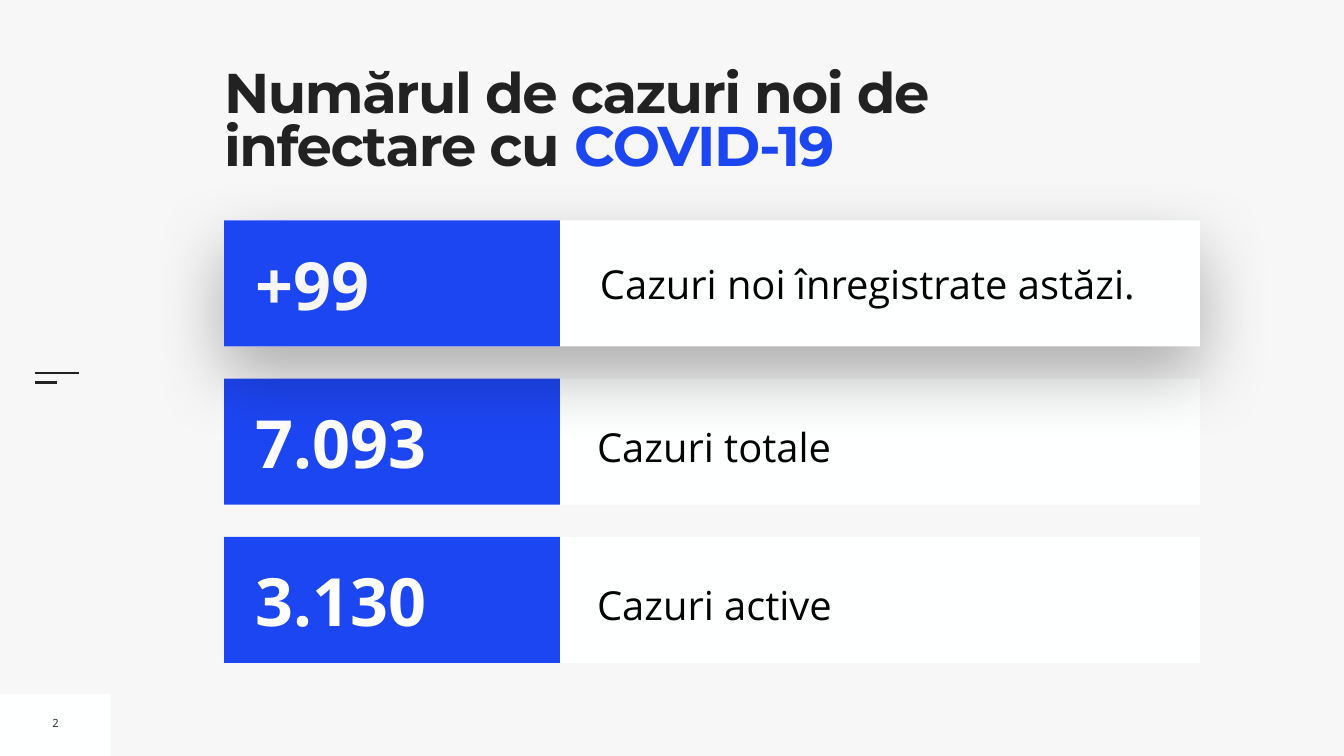
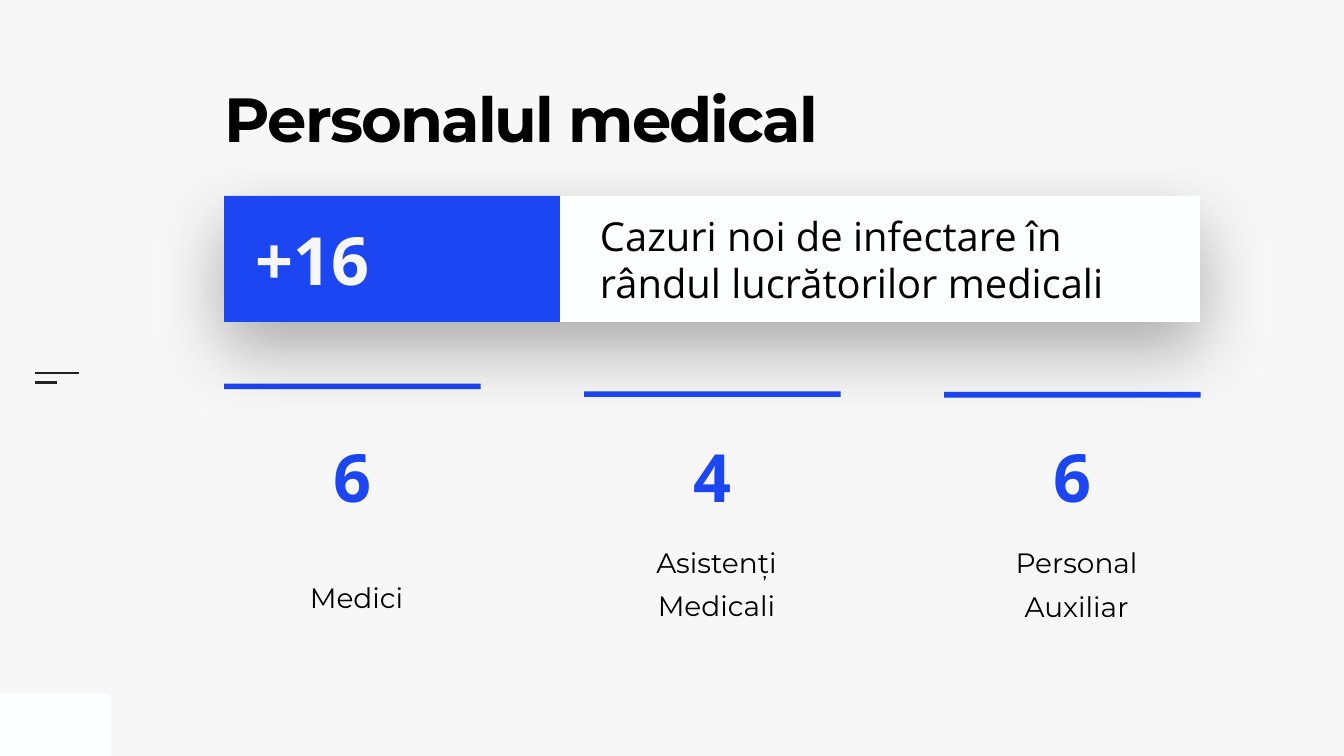
from lxml import etree
from pptx import Presentation
from pptx.dml.color import RGBColor
from pptx.enum.shapes import MSO_CONNECTOR, MSO_SHAPE
from pptx.enum.text import MSO_ANCHOR, MSO_AUTO_SIZE, PP_ALIGN
from pptx.oxml.ns import qn
from pptx.util import Pt

RECTANGLE = MSO_SHAPE.RECTANGLE
STRAIGHT = MSO_CONNECTOR.STRAIGHT
MIDDLE, TOP, BOTTOM = MSO_ANCHOR.MIDDLE, MSO_ANCHOR.TOP, MSO_ANCHOR.BOTTOM
LEFT, CENTER = PP_ALIGN.LEFT, PP_ALIGN.CENTER
NO_RESIZE, GROW = MSO_AUTO_SIZE.NONE, MSO_AUTO_SIZE.SHAPE_TO_FIT_TEXT

COLORS = {
    "background": "F7F7F7",
    "card": "FEFFFF",
    "blue": "1D46F3",
    "dark": "222222",
    "black": "000000",
    "white": "FFFFFF",
}
HEADING_FONT = "Montserrat"
BODY_FONT = "Open Sans"
TITLE_ONLY = 5

MARGIN_LEFT = 320
ROW_WIDTH, ROW_HEIGHT, BADGE_WIDTH = 1394, 180, 480
ROW_TOP, ROW_PITCH = 315, 226
FIGURE_HEIGHT = 130
COLUMN_WIDTH, COLUMN_HEIGHT, COLUMN_PITCH = 366.5, 393, 514.3


def rgb(name):
    return RGBColor.from_string(COLORS[name])


def write_text(shape, paragraphs, *, size, font=BODY_FONT, color="black",
               bold=False, align=LEFT, anchor=MIDDLE, insets=(7.2,) * 4,
               line_spacing=None, space_before=None, tracking=None,
               wrap=True, auto_size=NO_RESIZE):
    """Write paragraphs: each is a string or a list of (text, color) runs."""
    frame = shape.text_frame
    frame.word_wrap = wrap
    frame.auto_size = auto_size
    frame.vertical_anchor = anchor
    (frame.margin_left, frame.margin_top,
     frame.margin_right, frame.margin_bottom) = map(Pt, insets)
    if isinstance(paragraphs, str):
        paragraphs = [paragraphs]
    for index, content in enumerate(paragraphs):
        paragraph = frame.add_paragraph() if index else frame.paragraphs[0]
        paragraph.alignment = align
        if line_spacing:
            paragraph.line_spacing = line_spacing
        if space_before is not None:
            paragraph.space_before = Pt(space_before)
        runs = [(content, color)] if isinstance(content, str) else content
        for text, run_color in runs:
            run = paragraph.add_run()
            run.text = text
            run.font.name = font
            run.font.size = Pt(size)
            run.font.bold = bold
            run.font.color.rgb = rgb(run_color)
            if tracking:
                run.font._element.set("spc", str(round(tracking * 100)))


def add_text(slide, left, top, width, height, text, **text_format):
    box = slide.shapes.add_textbox(Pt(left), Pt(top), Pt(width), Pt(height))
    write_text(box, text, **text_format)


def add_block(slide, left, top, width, height, color):
    block = slide.shapes.add_shape(RECTANGLE, Pt(left), Pt(top), Pt(width), Pt(height))
    block.shadow.inherit = False
    block.fill.solid()
    block.fill.fore_color.rgb = rgb(color)
    block.line.fill.background()
    return block


def add_soft_shadow(shape):
    """Black shadow below the shape: 30% opaque, 100 pt blur, 40 pt away."""
    effects = shape._element.spPr.find(qn("a:effectLst"))
    shadow = etree.SubElement(
        effects, qn("a:outerShdw"), blurRad=str(Pt(100)), dist=str(Pt(40)),
        dir=str(90 * 60000), algn="ctr", rotWithShape="0")
    color = etree.SubElement(shadow, qn("a:srgbClr"), val=COLORS["black"])
    etree.SubElement(color, qn("a:alpha"), val="30000")


def add_menu_line(slide, top, right):
    line = slide.shapes.add_connector(STRAIGHT, Pt(50), Pt(top), Pt(right), Pt(top))
    line.line.color.rgb = rgb("dark")
    line.line.width = Pt(3)
    etree.SubElement(line._element.spPr, qn("a:effectLst"))


def add_base_slide(presentation):
    """Add a slide with the corner card and the two menu lines."""
    slide = presentation.slides.add_slide(presentation.slide_layouts[TITLE_ONLY])
    add_block(slide, 0, 991, 158, 89, "card")
    add_menu_line(slide, 533.5, 113)
    add_menu_line(slide, 546.5, 81)
    return slide


def set_title(slide, left, top, width, paragraphs, **text_format):
    title = slide.shapes.title
    title.left, title.top, title.width, title.height = map(
        Pt, (left, top, width, 196.5))
    write_text(title, paragraphs, font=HEADING_FONT, bold=True, anchor=TOP,
               insets=(0,) * 4, line_spacing=0.8, **text_format)


def add_figure(slide, left, top, width, text, **text_format):
    add_text(slide, left, top, width, FIGURE_HEIGHT, text, size=95, bold=True,
             **text_format)


def add_row(slide, top, figure, label, highlighted=False):
    """Add a white band with a blue badge; a highlighted one is raised."""
    band = add_block(slide, MARGIN_LEFT, top, ROW_WIDTH, ROW_HEIGHT, "card")
    if highlighted:
        add_soft_shadow(band)
        add_text(slide, 850, top, 847, ROW_HEIGHT, label, size=57)
    else:
        add_text(slide, 853, top + 46, 834, 81, label, size=57, insets=(0,) * 4,
                 line_spacing=1.3, space_before=20, auto_size=GROW)
    add_block(slide, MARGIN_LEFT, top, BADGE_WIDTH, ROW_HEIGHT, "blue")
    add_figure(slide, MARGIN_LEFT + 38.5, top + 25, 434, figure,
               color="background" if highlighted else "white")


def add_staff_column(slide, index, rule_top, label):
    left = MARGIN_LEFT + index * COLUMN_PITCH
    panel = add_block(slide, left, rule_top, COLUMN_WIDTH, COLUMN_HEIGHT, "background")
    write_text(panel, label, size=40, font=HEADING_FONT, align=CENTER, anchor=BOTTOM,
               insets=(40, 51, 28, 63), line_spacing=1.3, space_before=20)
    add_block(slide, left, rule_top, COLUMN_WIDTH, 8, "blue")


def build_cases_slide(presentation):
    slide = add_base_slide(presentation)
    add_text(slide, 67, 1014.5, 24.5, 36.7, "2", size=16, color="dark",
             align=CENTER, wrap=False)
    set_title(slide, MARGIN_LEFT, 100, 1441,
              ["Numărul de cazuri noi de",
               [("infectare cu ", "dark"), ("COVID-19", "blue")]],
              size=80, color="dark", tracking=-2)
    # The raised row comes after the total, so its shadow falls on it
    add_row(slide, ROW_TOP + ROW_PITCH, "7.093", "Cazuri totale")
    add_row(slide, ROW_TOP, "+99", "Cazuri noi înregistrate astăzi.", highlighted=True)
    add_row(slide, ROW_TOP + 2 * ROW_PITCH, "3.130", "Cazuri active")


def build_staff_slide(presentation):
    slide = add_base_slide(presentation)
    set_title(slide, 321, 134.6, 937, "Personalul medical", size=89, tracking=-2.7)
    staff = [
        (548, "6", "Medici"),
        (559, "4", "Asistenți Medicali"),
        (560, "6", "Personal Auxiliar"),
    ]
    for index, (rule_top, _, label) in enumerate(staff):
        add_staff_column(slide, index, rule_top, label)
    add_row(slide, 280, "+16", "Cazuri noi de infectare în rândul lucrătorilor medicali",
            highlighted=True)
    # Counts stand above the shadow of the raised row
    for index, (_, count, _) in enumerate(staff):
        add_figure(slide, MARGIN_LEFT + index * COLUMN_PITCH, 615, COLUMN_WIDTH,
                   count, color="blue", align=CENTER)


def main():
    presentation = Presentation()
    presentation.slide_width, presentation.slide_height = Pt(1920), Pt(1080)
    background = presentation.slide_master.background.fill
    background.solid()
    background.fore_color.rgb = rgb("background")
    build_cases_slide(presentation)
    build_staff_slide(presentation)
    presentation.save("out.pptx")


if __name__ == "__main__":
    main()
